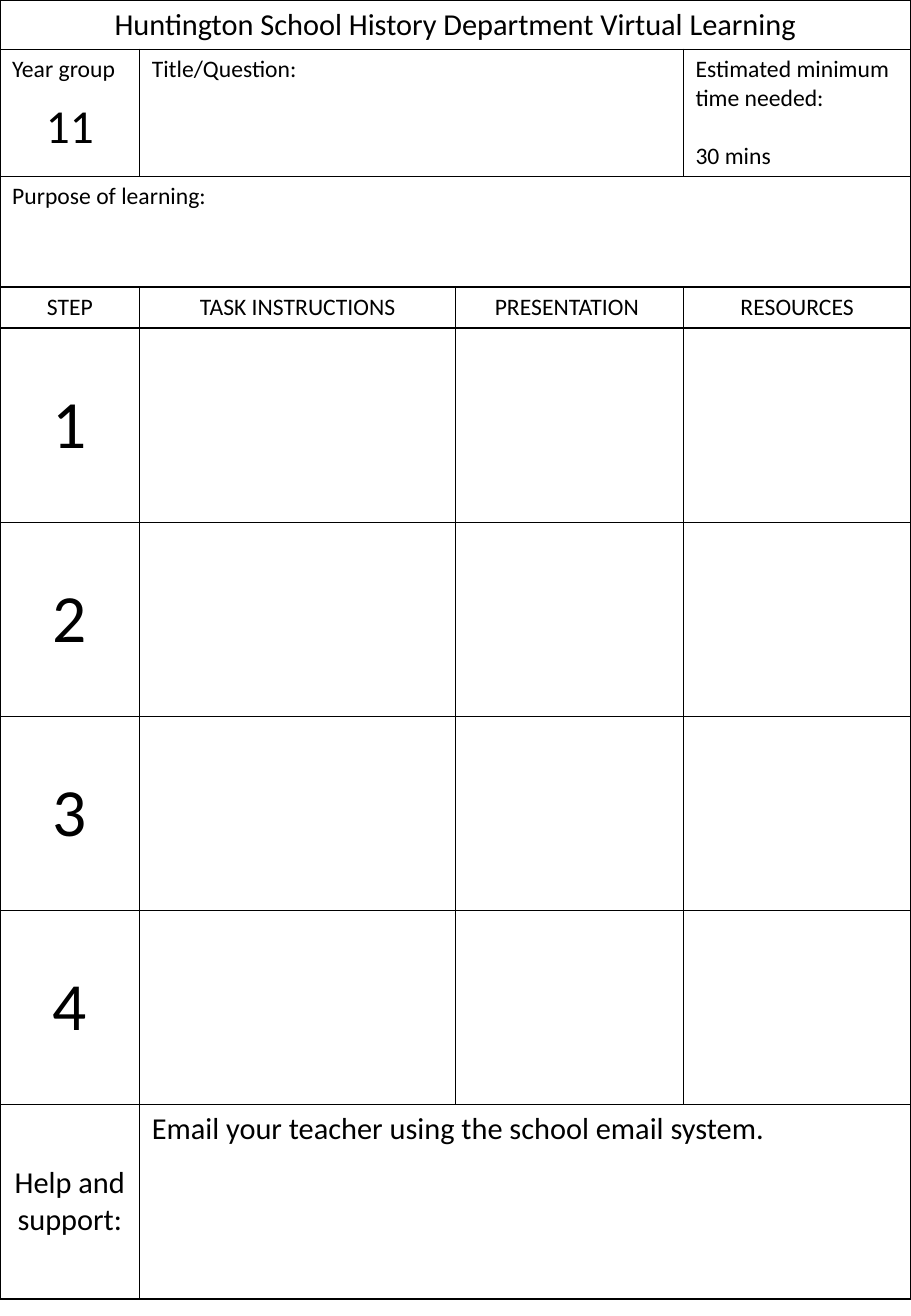
import pptx
import pptx.util
import pptx.dml.color
import pptx.enum.text
import lxml.etree
from pptx.oxml.ns import qn

Cm = pptx.util.Cm
Pt = pptx.util.Pt
LEFT = pptx.enum.text.PP_ALIGN.LEFT
CENTER = pptx.enum.text.PP_ALIGN.CENTER
MIDDLE = pptx.enum.text.MSO_ANCHOR.MIDDLE

COLORS = {"ink": "000000"}
FONT = "Calibri"
COLUMN_WIDTHS = [2.92, 6.61, 4.76, 4.76]
STEP_COUNT = 4
FIRST_STEP_ROW = 4
HELP_ROW = FIRST_STEP_ROW + STEP_COUNT
ROW_HEIGHTS = [1.03, 2.65, 2.31, 0.86] + [4.06] * (STEP_COUNT + 1)
MERGES = [(0, 0, 3), (1, 1, 2), (2, 0, 3), (HELP_ROW, 1, 3)]


def add_borders(cell):
    properties = cell._tc.get_or_add_tcPr()
    for side in ("a:lnL", "a:lnR", "a:lnT", "a:lnB"):
        line = lxml.etree.SubElement(properties, qn(side), w=str(Pt(1)))
        fill = lxml.etree.SubElement(line, qn("a:solidFill"))
        lxml.etree.SubElement(fill, qn("a:srgbClr"), val=COLORS["ink"])


def write_cell(cell, lines, size, align=LEFT):
    cell.text_frame.text = "\n".join(lines)
    for para in cell.text_frame.paragraphs:
        para.alignment = align
        for span in para.runs:
            span.font.name = FONT
            span.font.size = Pt(size)
            span.font.color.rgb = pptx.dml.color.RGBColor.from_string(COLORS["ink"])


deck = pptx.Presentation()
deck.slide_width = Cm(19.05)
deck.slide_height = Cm(27.51)
page = deck.slides.add_slide(deck.slide_layouts[6])

frame = page.shapes.add_table(
    len(ROW_HEIGHTS), len(COLUMN_WIDTHS), 0, 0,
    Cm(sum(COLUMN_WIDTHS)), Cm(sum(ROW_HEIGHTS)))
plan = frame.table
plan.first_row = False
plan.horz_banding = False
for column, width in zip(plan.columns, COLUMN_WIDTHS):
    column.width = Cm(width)
for row, height in zip(plan.rows, ROW_HEIGHTS):
    row.height = Cm(height)
for cell in plan.iter_cells():
    add_borders(cell)
    cell.fill.background()
for row, first, last in MERGES:
    plan.cell(row, first).merge(plan.cell(row, last))

title = plan.cell(0, 0)
write_cell(title, ["Huntington School History Department Virtual Learning"], 18, CENTER)
title.vertical_anchor = MIDDLE

year_group = plan.cell(1, 0)
write_cell(year_group, ["Year group", "11"], 14)
year = year_group.text_frame.paragraphs[1]
year.alignment = CENTER
year.space_before = Pt(8.5)
year.runs[0].font.size = Pt(28)

write_cell(plan.cell(1, 1), ["Title/Question:"], 14)
time_needed = plan.cell(1, 3)
write_cell(time_needed, ["Estimated minimum time needed:", "30 mins"], 14)
time_needed.text_frame.paragraphs[1].space_before = Pt(17)
write_cell(plan.cell(2, 0), ["Purpose of learning:"], 14)

headings = ["STEP", "TASK INSTRUCTIONS", "PRESENTATION ", "RESOURCES"]
for index, heading in enumerate(headings):
    write_cell(plan.cell(3, index), [heading], 14, CENTER)

for step in range(STEP_COUNT):
    number = plan.cell(FIRST_STEP_ROW + step, 0)
    write_cell(number, [str(step + 1)], 40, CENTER)
    number.vertical_anchor = MIDDLE

for row in (FIRST_STEP_ROW, FIRST_STEP_ROW + 1):
    tasks = plan.cell(row, 1).text_frame
    tasks.add_paragraph()
    for para in tasks.paragraphs:
        properties = para._p.get_or_add_pPr()
        properties.set("marL", str(Cm(0.79)))
        properties.set("indent", str(-Cm(0.79)))
        lxml.etree.SubElement(properties, qn("a:buFont"), typeface="Arial")
        lxml.etree.SubElement(properties, qn("a:buChar"), char="•")
        ending = lxml.etree.SubElement(para._p, qn("a:endParaRPr"), sz="1800")
        lxml.etree.SubElement(ending, qn("a:latin"), typeface=FONT)

help_label = plan.cell(HELP_ROW, 0)
write_cell(help_label, ["Help and support:"], 18, CENTER)
help_label.vertical_anchor = MIDDLE
write_cell(plan.cell(HELP_ROW, 1), ["Email your teacher using the school email system."], 18)

deck.save("out.pptx")
